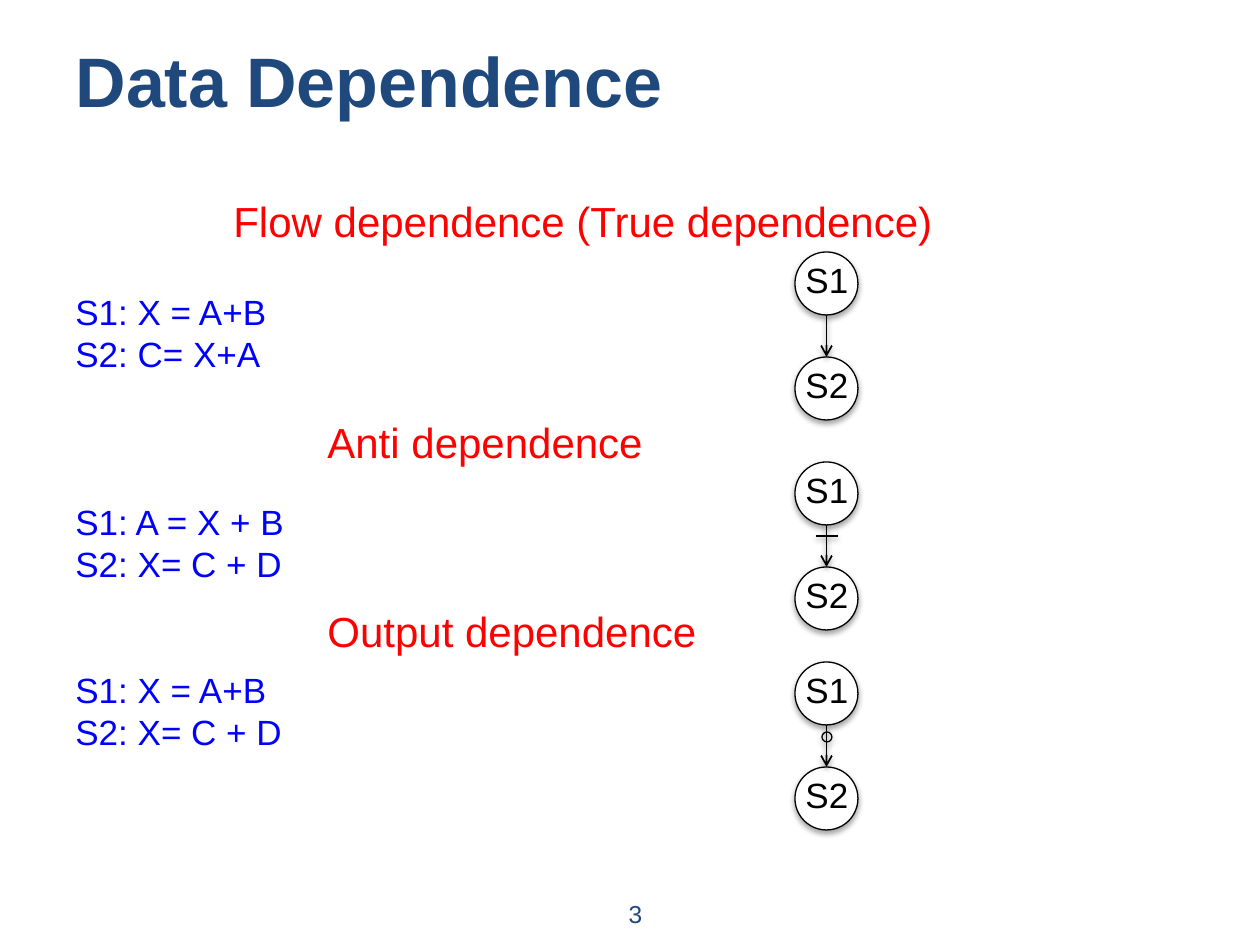
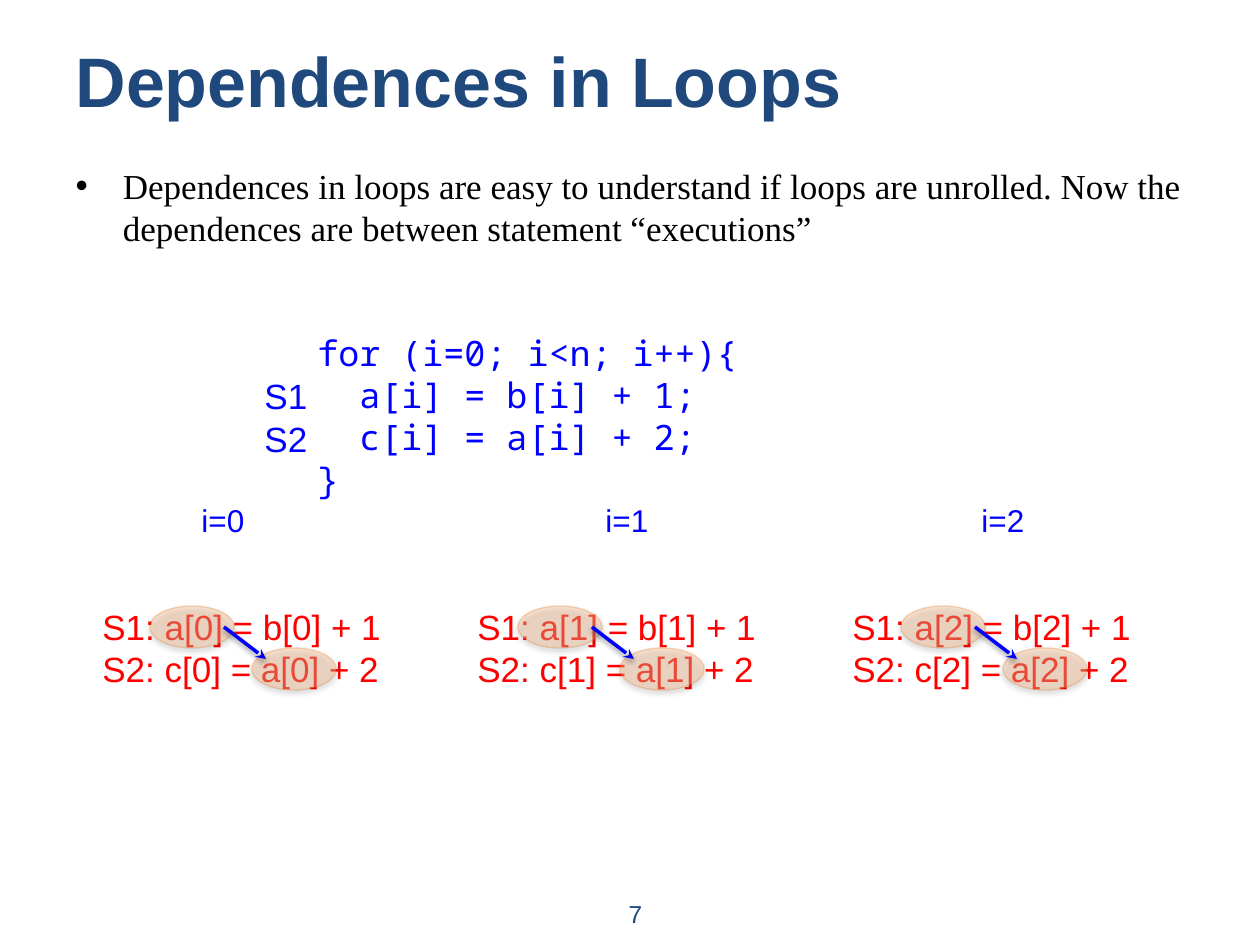
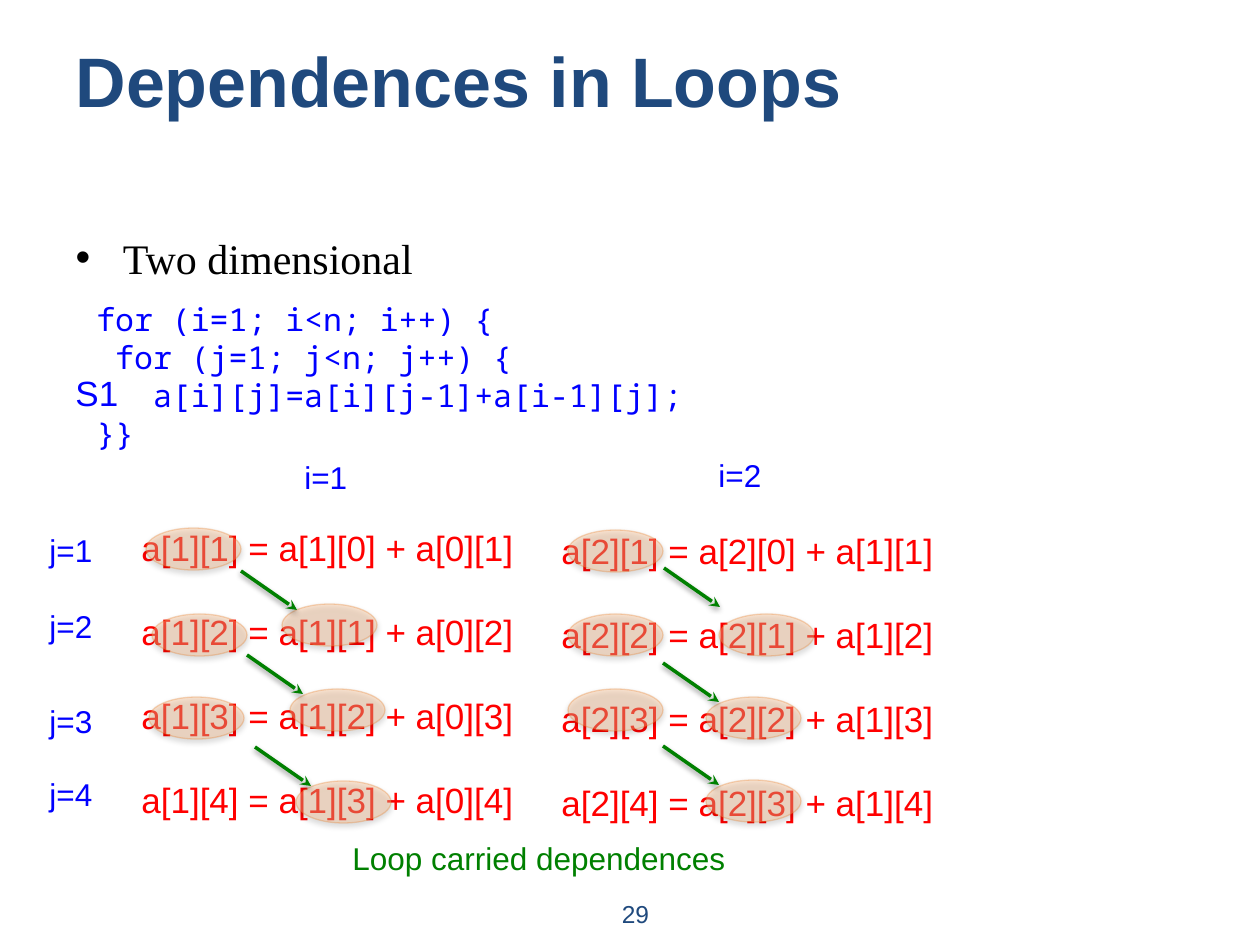
from lxml import etree
from pptx import Presentation
from pptx.dml.color import RGBColor
from pptx.enum.shapes import MSO_CONNECTOR, MSO_SHAPE
from pptx.enum.text import MSO_ANCHOR, MSO_AUTO_SIZE, PP_ALIGN
from pptx.oxml.ns import qn
from pptx.util import Emu, Pt

STRAIGHT, OVAL = MSO_CONNECTOR.STRAIGHT, MSO_SHAPE.OVAL
LEFT, CENTER = PP_ALIGN.LEFT, PP_ALIGN.CENTER
TOP, MIDDLE, BOTTOM = MSO_ANCHOR.TOP, MSO_ANCHOR.MIDDLE, MSO_ANCHOR.BOTTOM
NO_FIT = MSO_AUTO_SIZE.NONE

PX_PER_INCH = 126
PX_PER_PT = PX_PER_INCH / 72
LEADING = 1.2
INSETS = 13
NAVY, RED, BLUE, GREEN = "1F497D", "FF0000", "0000FF", "008000"
BLACK, WHITE, PEACH, ORANGE = "000000", "FFFFFF", "FAC090", "E46C0A"

TITLE = {"size": 40, "color": NAVY, "bold": True}
HEADING = {"size": 24, "color": RED}
STATEMENT = {"size": 20, "color": BLUE}
EXECUTION = {"size": 20, "color": RED}
NODE_LABEL = {"size": 20, "color": BLACK}
INDEX = {"size": 18, "color": BLUE}
CAPTION = {"size": 18, "color": GREEN}
PAGE = {"size": 14, "color": NAVY}
CODE = {"size": 20, "color": BLUE, "name": "Noto Sans Mono"}
SMALL_CODE = {**CODE, "size": 18}
BRACE = {**CODE, "name": "Courier New"}
BULLET = {"size": 20, "color": BLACK, "name": "Times New Roman"}
BIG_BULLET = {**BULLET, "size": 24}

DEPENDENCES = [
    {"heading": ("Flow dependence (True dependence)", 221, 189, 731),
     "statements": (["S1: X = A+B", "S2: C= X+A"], 284), "nodes_top": 252},
    {"heading": ("Anti dependence", 315, 410, 345),
     "statements": (["S1: A = X + B", "S2: X= C + D"], 494), "nodes_top": 462},
    {"heading": ("Output dependence", 315, 599, 398),
     "statements": (["S1: X = A+B", "S2: X= C + D"], 662), "nodes_top": 662},
]
NODE_LEFT, NODE_SIZE, NODE_STEP = 795, 63, 105
ANTI_TICK = (816, 536, 838, 536)
OUTPUT_RING = (822, 732, 10, 10)

UNROLLED_BULLET = ("Dependences in loops are easy to understand if loops are unrolled. "
                   "Now the dependences are between statement “executions”")
LOOP = ["for (i=0; i<n; i++){", "  a[i] = b[i] + 1;", "  c[i] = a[i] + 2;", "}"]
LOOP_LABELS = [("S1", 368), ("S2", 411)]
ITERATIONS = [(189, 150), (593, 518), (969, 901)]

NESTED_LOOP = ["for (i=1; i<n; i++) {", " for (j=1; j<n; j++) {",
               "   a[i][j]=a[i][j-1]+a[i-1][j];", "}}"]
OUTER_ITERATIONS = [
    {"label": (292, 452), "list": (129, 520),
     "links": [((146, 528), (282, 604), (241, 571)),
               ((152, 614), (290, 689), (247, 655)),
               ((149, 697), (296, 781), (255, 747))]},
    {"label": (706, 450), "list": (549, 523),
     "links": [((568, 530), (719, 614), (664, 568)),
               ((568, 614), (706, 697), (663, 663)),
               ((568, 689), (706, 780), (663, 746))]},
]
INNER_TOPS = [525, 601, 696, 769]


def px(*lengths):
    return [Emu(round(length * 914400 / PX_PER_INCH)) for length in lengths]


def rgb(color):
    return RGBColor.from_string(color)


def write(frame, lines, style, align=LEFT, anchor=TOP, gap=0):
    for key, value in {"word_wrap": True, "auto_size": NO_FIT,
                       "vertical_anchor": anchor}.items():
        setattr(frame, key, value)
    for number, line in enumerate(lines):
        paragraph = frame.paragraphs[0] if number == 0 else frame.add_paragraph()
        for key, value in {"alignment": align, "line_spacing": Pt(style["size"] * LEADING),
                           "space_before": Pt(gap if number else 0)}.items():
            setattr(paragraph, key, value)
        run = paragraph.add_run()
        run.text = line
        style_run(run, style)


def style_run(run, style):
    for key, value in {"name": "Arial", "bold": False, **style}.items():
        if key == "color":
            run.font.color.rgb = rgb(value)
        else:
            setattr(run.font, key, Pt(value) if key == "size" else value)


def add_text(slide, lines, left, top, width, style, gap=0, **layout):
    line_height = style["size"] * LEADING
    height = (len(lines) * line_height + (len(lines) - 1) * gap) * PX_PER_PT + INSETS
    box = slide.shapes.add_textbox(*px(left, top, width, height))
    write(box.text_frame, lines, style, gap=gap, **layout)
    return box


def add_shadow(properties, opacity, distance):
    effects = properties.find(qn("a:effectLst"))
    if effects is None:
        effects = etree.SubElement(properties, qn("a:effectLst"))
    shadow = etree.SubElement(effects, qn("a:outerShdw"), blurRad="40000",
                              dist=str(distance), dir="5400000", rotWithShape="0")
    color = etree.SubElement(shadow, qn("a:srgbClr"), val=BLACK)
    etree.SubElement(color, qn("a:alpha"), val=str(opacity * 1000))


def set_opacity(parent, percent):
    color = parent.find(qn("a:solidFill")).find(qn("a:srgbClr"))
    etree.SubElement(color, qn("a:alpha"), val=str(percent * 1000))


def add_ellipse(slide, left, top, width, height, fill=None, line=BLACK):
    ellipse = slide.shapes.add_shape(OVAL, *px(left, top, width, height))
    if fill:
        ellipse.fill.solid()
        ellipse.fill.fore_color.rgb = rgb(fill)
    else:
        ellipse.fill.background()
    ellipse.line.color.rgb = rgb(line)
    ellipse.line.width = Pt(0.75)
    ellipse.shadow.inherit = False
    add_shadow(ellipse.element.spPr, 35, 23000)
    return ellipse


def add_highlight(slide, left, top, width):
    properties = add_ellipse(slide, left, top, width, 42, PEACH, ORANGE).element.spPr
    set_opacity(properties, 39)
    set_opacity(properties.find(qn("a:ln")), 25)


def add_line(slide, ends, color, width, head=None):
    connector = slide.shapes.add_connector(STRAIGHT, *px(*ends))
    connector.line.color.rgb = rgb(color)
    connector.line.width = Pt(width)
    properties = connector.element.spPr
    if head:
        etree.SubElement(properties.find(qn("a:ln")), qn("a:tailEnd"), type=head)
    add_shadow(properties, 38, 20000)


def add_link(slide, source, target, start, reach, width, color):
    for left, top in (target, source):
        add_highlight(slide, left, top, width)
    (x, y), (dx, dy) = start, reach
    add_line(slide, (x, y, x + dx, y + dy), color, 2, "stealth")


def place(placeholder, left, top, width, height):
    sides = px(left, top, width, height)
    for key, value in zip(("left", "top", "width", "height"), sides):
        setattr(placeholder, key, value)


def new_slide(deck, layout, title, page):
    slide = deck.slides.add_slide(deck.slide_layouts[layout])
    place(slide.shapes.title, 63, 0, 1134, 158)
    write(slide.shapes.title.text_frame, [title], TITLE, anchor=MIDDLE)
    number = add_text(slide, [page], 588, 885, 95, PAGE, align=CENTER, anchor=BOTTOM)
    place(number, 588, 885, 95, 50)
    return slide


def add_body(slide, text, top, height, style):
    body = slide.placeholders[1]
    place(body, 63, top, 1134, height)
    write(body.text_frame, [text], style)


def build_kinds(deck):
    slide = new_slide(deck, 5, "Data Dependence", "3")
    middle = NODE_LEFT + NODE_SIZE / 2
    for dependence in DEPENDENCES:
        heading, left, top, width = dependence["heading"]
        add_text(slide, [heading], left, top, width, HEADING)
        statements, top = dependence["statements"]
        add_text(slide, statements, 63, top, 240, STATEMENT)
        first = dependence["nodes_top"]
        for label, node_top in (("S1", first), ("S2", first + NODE_STEP)):
            add_ellipse(slide, NODE_LEFT, node_top, NODE_SIZE, NODE_SIZE, WHITE)
            add_text(slide, [label], NODE_LEFT - 2, node_top, 70, NODE_LABEL)
        add_line(slide, (middle, first + NODE_SIZE, middle, first + NODE_STEP),
                 BLACK, 1, "arrow")
    add_line(slide, ANTI_TICK, BLACK, 1)
    add_ellipse(slide, *OUTPUT_RING)


def build_unrolled(deck):
    slide = new_slide(deck, 1, "Dependences in Loops", "7")
    add_body(slide, UNROLLED_BULLET, 158, 703, BULLET)
    loop = add_text(slide, LOOP, 305, 325, 452, CODE)
    style_run(loop.text_frame.paragraphs[-1].runs[0], BRACE)
    for label, top in LOOP_LABELS:
        add_text(slide, [label], 252, top, 70, STATEMENT)
    for i, (label_left, source_left) in enumerate(ITERATIONS):
        add_text(slide, [f"i={i}"], label_left, 495, 70, INDEX)
        add_text(slide, [f"S1: a[{i}] = b[{i}] + 1", f"S2: c[{i}] = a[{i}] + 2"],
                 90 + 375 * i, 599, 325, EXECUTION)
        add_link(slide, (source_left, 606), (source_left + 102, 648),
                 (source_left + 74, 627), (42, 32), 84, BLUE)


def build_nested(deck):
    slide = new_slide(deck, 1, "Dependences in Loops", "29")
    add_body(slide, "Two dimensional", 226, 624, BIG_BULLET)
    add_text(slide, NESTED_LOOP, 84, 294, 683, SMALL_CODE)
    add_text(slide, ["S1"], 63, 365, 70, STATEMENT)
    for j, top in enumerate(INNER_TOPS, 1):
        add_text(slide, [f"j={j}"], 37, top, 95, INDEX)
    for i, iteration in enumerate(OUTER_ITERATIONS, 1):
        add_text(slide, [f"i={i}"], *iteration["label"], 95, INDEX)
        executions = [f"a[{i}][{j}] = a[{i}][{j - 1}] + a[{i - 1}][{j}]"
                      for j in range(1, 5)]
        add_text(slide, executions, *iteration["list"], 420, EXECUTION, gap=24)
        for source, target, start in iteration["links"]:
            add_link(slide, source, target, start, (56, 39), 95, GREEN)
    caption = add_text(slide, ["Loop carried dependences"], 340, 833, 427, CAPTION)
    caption.fill.solid()
    caption.fill.fore_color.rgb = rgb(WHITE)


def main():
    deck = Presentation()
    deck.slide_width, deck.slide_height = px(1260, 945)
    build_kinds(deck)
    build_unrolled(deck)
    build_nested(deck)
    deck.save("out.pptx")


if __name__ == "__main__":
    main()
